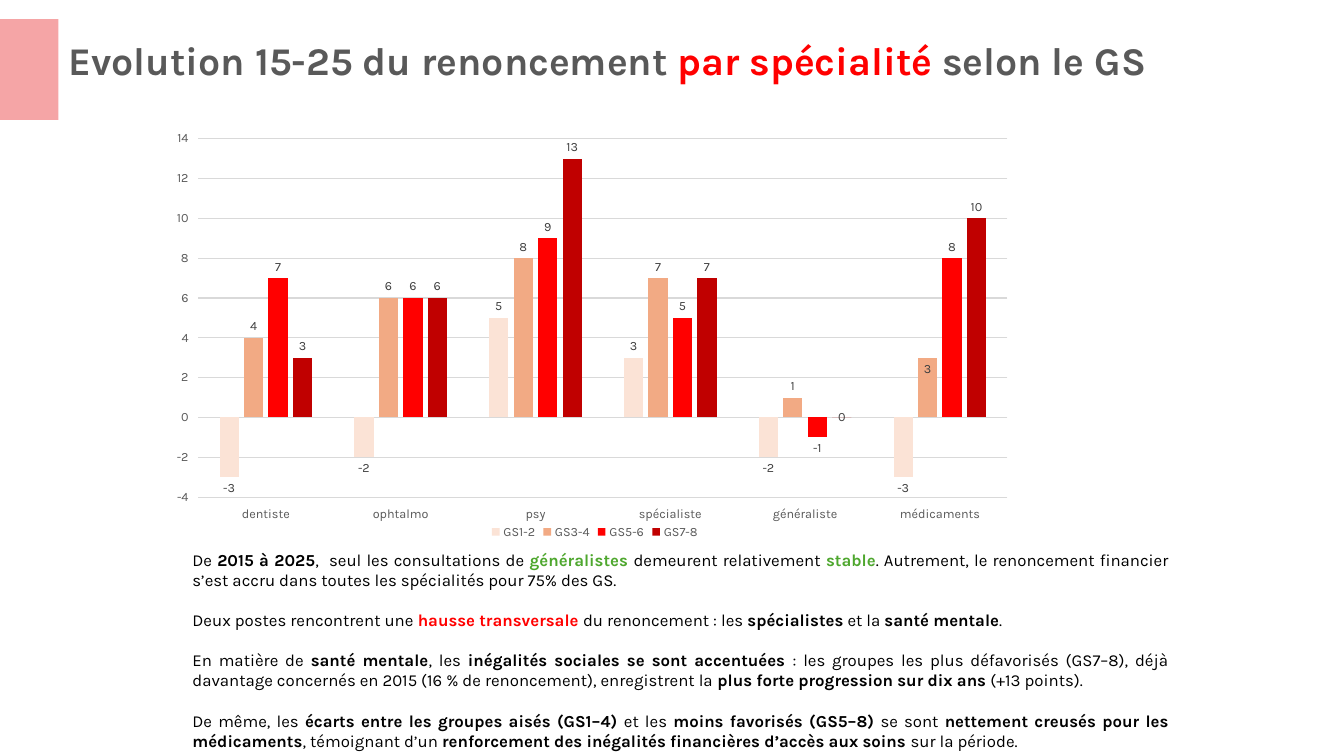
"""Slide on how forgone care changed from 2015 to 2025, by specialty and social group."""
from pptx import Presentation
from pptx.chart.data import CategoryChartData
from pptx.dml.color import RGBColor
from pptx.enum.chart import XL_CHART_TYPE, XL_LABEL_POSITION, XL_LEGEND_POSITION, XL_TICK_LABEL_POSITION, XL_TICK_MARK
from pptx.enum.shapes import MSO_SHAPE
from pptx.enum.text import MSO_AUTO_SIZE, PP_ALIGN
from pptx.oxml import parse_xml
from pptx.oxml.ns import nsdecls, qn
from pptx.util import Inches, Pt

BARS = XL_CHART_TYPE.COLUMN_CLUSTERED
ABOVE, INSIDE, MIDDLE = XL_LABEL_POSITION.OUTSIDE_END, XL_LABEL_POSITION.INSIDE_END, XL_LABEL_POSITION.CENTER
BOTTOM, LOW, NO_TICK = XL_LEGEND_POSITION.BOTTOM, XL_TICK_LABEL_POSITION.LOW, XL_TICK_MARK.NONE
RECT, GROW, JUSTIFY = MSO_SHAPE.RECTANGLE, MSO_AUTO_SIZE.SHAPE_TO_FIT_TEXT, PP_ALIGN.JUSTIFY

FACE = "Karla"
BLACK = RGBColor(0x00, 0x00, 0x00)
GREY = RGBColor(0x59, 0x59, 0x59)
DARK = RGBColor(0x40, 0x40, 0x40)
PALE = RGBColor(0xD9, 0xD9, 0xD9)
RED = RGBColor(0xFF, 0x00, 0x00)
GREEN = RGBColor(0x4E, 0xA7, 0x2E)
CORAL = RGBColor(0xE5, 0x15, 0x17)
CREAM = RGBColor(0xFB, 0xE3, 0xD6)
PEACH = RGBColor(0xF2, 0xAA, 0x84)
WINE = RGBColor(0xC0, 0x00, 0x00)

deck = Presentation()
deck.slide_width, deck.slide_height = Inches(13.33), Inches(7.5)
slide = deck.slides.add_slide(deck.slide_layouts[6])


def place(left, top, width, height):
    """Turn percentages of the slide into lengths."""
    wide, high = deck.slide_width / 100, deck.slide_height / 100
    return int(left * wide), int(top * high), int(width * wide), int(height * high)


def style(font, size, color, bold=False):
    """Set face, size, colour and weight of a font."""
    font.name, font.size, font.bold = FACE, Pt(size), bold
    font.color.rgb = color


title = slide.shapes.add_textbox(*place(4.35, 4.13, 82.07, 11.73)).text_frame
title.word_wrap, title.auto_size = True, GROW
for text, color in (("Evolution 15-25 du renoncement ", GREY), ("par spécialité ", RED), ("selon le GS", GREY)):
    run = title.paragraphs[0].add_run()
    run.text = text
    style(run.font, 28, color, True)

groups = (
    ("GS1-2", CREAM, (-3, -2, 5, 3, -2, -3)),
    ("GS3-4", PEACH, (4, 6, 8, 7, 1, 3)),
    ("GS5-6", RED, (7, 6, 9, 5, -1, 8)),
    ("GS7-8", WINE, (3, 6, 13, 7, 0, 10)),
)
data = CategoryChartData(number_format="0")
data.categories = ["dentiste", "ophtalmo", "psy", "spécialiste", "généraliste", "médicaments"]
for name, color, values in groups:
    data.add_series(name, values)
chart = slide.shapes.add_chart(BARS, *place(12.75, 15.47, 63.02, 56.4), data).chart
chart.has_title = False
style(chart.font, 10, BLACK)
chart.has_legend = True
chart.legend.position = BOTTOM
chart.legend.include_in_layout = False
style(chart.legend.font, 9, GREY)

for axis in (chart.category_axis, chart.value_axis):
    axis.major_tick_mark = axis.minor_tick_mark = NO_TICK
    axis.tick_label_position = LOW
    style(axis.tick_labels.font, 9, GREY)
cats, scale = chart.category_axis, chart.value_axis
scale.minimum_scale, scale.maximum_scale, scale.major_unit = -4, 14, 2
scale.tick_labels.number_format, scale.tick_labels.number_format_is_linked = "0", False
scale.format.line.fill.background()
scale.has_major_gridlines = True
for line in (cats.format.line, scale.major_gridlines.format.line):
    line.color.rgb, line.width = PALE, Pt(0.75)

plot = chart.plots[0]
plot.gap_width, plot.overlap, plot.vary_by_categories = 219, -27, False
for series, (name, color, values) in zip(plot.series, groups):
    series.invert_if_negative = False
    series.format.fill.solid()
    series.format.fill.fore_color.rgb = color
    labels = series.data_labels
    labels.show_value, labels.position = True, ABOVE
    labels.number_format, labels.number_format_is_linked = "0", False
    style(labels.font, 9, DARK)
for row, col, spot in ((1, 5, INSIDE), (3, 4, MIDDLE)):
    label = plot.series[row].points[col].data_label
    style(label.font, 9, DARK)
    label.position = spot

area = chart._chartSpace.find(".//" + qn("c:plotArea"))
for old in area.findall(qn("c:layout")):
    area.remove(old)
parts = "".join(f'<c:{key} val="{val}"/>' for key, val in (
    ("layoutTarget", "inner"), ("xMode", "edge"), ("yMode", "edge"),
    ("x", 0.032), ("y", 0.051), ("w", 0.955), ("h", 0.841)))
area.insert(0, parse_xml(f'<c:layout {nsdecls("c")}><c:manualLayout>{parts}</c:manualLayout></c:layout>'))

notes = (
    (("De ", None), ("2015 à 2025", BLACK), (",  seul les consultations de ", None),
     ("généralistes ", GREEN), ("demeurent relativement ", None), ("stable", GREEN),
     (". Autrement, le renoncement financier s’est accru dans toutes les spécialités pour 75% des GS.", None)),
    (("Deux postes rencontrent une ", None), ("hausse transversale ", RED), ("du renoncement : les ", None),
     ("spécialistes", BLACK), (" et la ", None), ("santé mentale", BLACK), (".", None)),
    (("En matière de ", None), ("santé mentale", BLACK), (", les ", None),
     ("inégalités sociales se sont accentuées", BLACK),
     (" : les groupes les plus défavorisés (GS7–8), déjà davantage concernés en 2015 "
      "(16 % de renoncement), enregistrent la ", None),
     ("plus forte progression sur dix ans", BLACK), (" (+13 points).", None)),
    (("De même, les ", None), ("écarts entre les groupes aisés (GS1–4)", BLACK), (" et les ", None),
     ("moins favorisés (GS5–8)", BLACK), (" se sont ", None),
     ("nettement creusés pour les médicaments", BLACK), (", témoignant d’un ", None),
     ("renforcement des inégalités financières d’accès aux soins", BLACK), (" sur la période.", None)),
)
body = slide.shapes.add_textbox(*place(13.58, 72, 74.12, 28)).text_frame
body.word_wrap, body.auto_size = True, GROW
for index, note in enumerate(notes):
    para = body.add_paragraph() if index else body.paragraphs[0]
    para.alignment = JUSTIFY
    para.space_before = Pt(14.4 if index else 0)
    for text, accent in note:
        run = para.add_run()
        run.text = text
        style(run.font, 12, accent or BLACK, accent is not None)

block = slide.shapes.add_shape(RECT, *place(0, 2.53, 4.35, 13.33))
block.shadow.inherit = False
block.line.fill.background()
block.fill.solid()
block.fill.fore_color.rgb = CORAL
tint = block.fill._xPr.find(".//" + qn("a:srgbClr"))
tint.append(parse_xml(f'<a:alpha {nsdecls("a")} val="38000"/>'))

deck.save("out.pptx")
